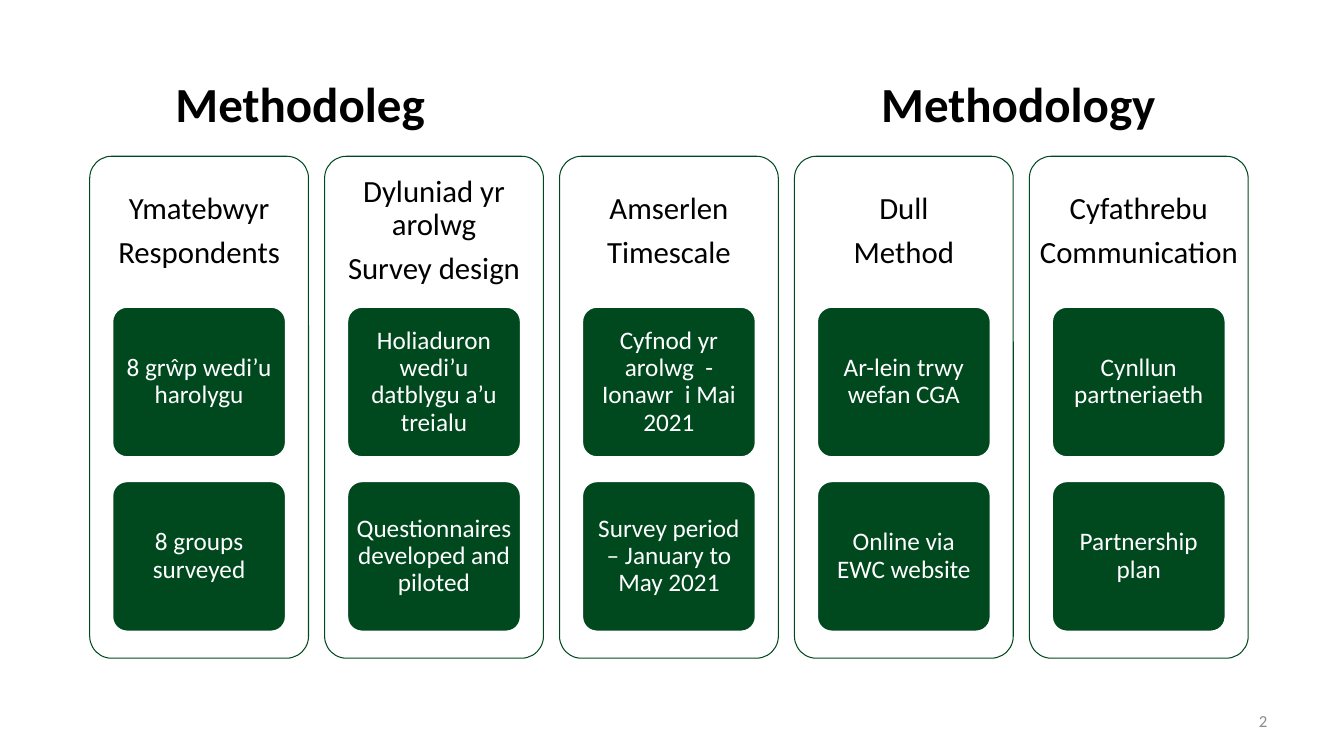
from lxml import etree
from pptx import Presentation
from pptx.dml.color import RGBColor
from pptx.enum.shapes import MSO_SHAPE as Shape
from pptx.enum.text import MSO_ANCHOR as Anchor, MSO_AUTO_SIZE as AutoSize, PP_ALIGN as Align
from pptx.oxml.ns import qn
from pptx.util import Inches, Pt

GREEN = RGBColor(0x00, 0x49, 0x1F)
WHITE = RGBColor(0xFF, 0xFF, 0xFF)
BLACK = RGBColor(0x00, 0x00, 0x00)
GREY = RGBColor(0x8C, 0x8C, 0x8C)

FIRST_LEFT, COLUMN_PITCH = 0.89, 2.33
PANEL_TOP, PANEL_WIDTH, PANEL_HEIGHT = 1.55, 2.17, 4.98
HEADING_HEIGHT = 1.49
TILE_INDENT, TILE_WIDTH, TILE_HEIGHT = 0.22, 1.73, 1.5
TILE_TOP, TILE_PITCH = 3.04, 1.73

# Welsh heading, English heading, Welsh tile, English tile
COLUMNS = [
    ("Ymatebwyr", "Respondents", "8 grŵp wedi’u harolygu", "8 groups surveyed"),
    ("Dyluniad yr arolwg", "Survey design",
     "Holiaduron wedi’u datblygu a’u treialu",
     "Questionnaires\vdeveloped and piloted"),
    ("Amserlen", "Timescale", "Cyfnod yr arolwg  - Ionawr  i Mai 2021",
     "Survey period – January to May 2021"),
    ("Dull", "Method", "Ar-lein trwy wefan CGA", "Online via EWC website"),
    ("Cyfathrebu", "Communication", "Cynllun partneriaeth", "Partnership plan"),
]


def write(frame, *lines, size, color, bold=False, align=Align.CENTER,
          anchor=Anchor.MIDDLE, insets=(0.1, 0.05), spacing=0.9, after=0, tab=None):
    """Fill a text frame with one paragraph per line; insets are (sides, ends)."""
    frame.word_wrap = True
    frame.auto_size = AutoSize.NONE
    frame.vertical_anchor = anchor
    frame.margin_left = frame.margin_right = Inches(insets[0])
    frame.margin_top = frame.margin_bottom = Inches(insets[1])
    for index, line in enumerate(lines):
        paragraph = frame.add_paragraph() if index else frame.paragraphs[0]
        paragraph.text = line
        paragraph.alignment = align
        paragraph.line_spacing = spacing
        paragraph.space_before = Pt(0)
        paragraph.space_after = Pt(after)
        if tab:
            stops = etree.SubElement(paragraph._p.get_or_add_pPr(), qn("a:tabLst"))
            etree.SubElement(stops, qn("a:tab"), pos=str(Inches(tab)), algn="l")
        for font in [paragraph.font] + [run.font for run in paragraph.runs]:
            font.name, font.size, font.bold = "Calibri", Pt(size), bold
            font.color.rgb = color


class MethodologySlide:
    def __init__(self, presentation):
        self.slide = presentation.slides.add_slide(presentation.slide_layouts[5])

    def title(self, text):
        heading = self.slide.shapes.title
        heading.left, heading.top = Inches(1.41), Inches(0.68)
        heading.width, heading.height = Inches(10.45), Inches(0.69)
        write(heading.text_frame, text, size=35, color=BLACK, bold=True,
              align=Align.LEFT, anchor=Anchor.TOP, insets=(0.33, 0.05),
              spacing=1.0, tab=7.0)

    def text(self, left, top, width, height, *lines, **style):
        box = self.slide.shapes.add_textbox(
            Inches(left), Inches(top), Inches(width), Inches(height))
        write(box.text_frame, *lines, **style)
        return box

    def rounded(self, left, top, width, height, line, line_width, fill=None):
        card = self.slide.shapes.add_shape(
            Shape.ROUNDED_RECTANGLE, Inches(left), Inches(top),
            Inches(width), Inches(height))
        card.adjustments[0] = 0.1
        card.shadow.inherit = False
        card.line.color.rgb, card.line.width = line, Pt(line_width)
        if fill is None:
            card.fill.background()
        else:
            card.fill.solid()
            card.fill.fore_color.rgb = fill
        return card

    def column(self, left, headings, tiles):
        self.rounded(left, PANEL_TOP, PANEL_WIDTH, PANEL_HEIGHT, GREEN, 0.75)
        self.text(left, PANEL_TOP, PANEL_WIDTH, HEADING_HEIGHT, *headings,
                  size=22, color=BLACK, insets=(0.09, 0.09), after=7.7)
        for row, wording in enumerate(tiles):
            tile = self.rounded(left + TILE_INDENT, TILE_TOP + row * TILE_PITCH,
                                TILE_WIDTH, TILE_HEIGHT, WHITE, 2, GREEN)
            write(tile.text_frame, wording, size=18, color=WHITE,
                  insets=(0.05, 0.04))

    def page_number(self, number):
        """Add the number as a live slide-number field."""
        box = self.text(9.56, 6.95, 3.11, 0.4, number, size=12, color=GREY,
                        align=Align.RIGHT, spacing=1.0)
        run = box.text_frame.paragraphs[0].runs[0]._r
        field = etree.Element(qn("a:fld"), type="slidenum",
                              id="{B6F15528-21DE-4FAA-801E-634DDDAF4B2B}")
        run.addprevious(field)
        field.extend(list(run))
        field.getparent().remove(run)


def main():
    presentation = Presentation()
    presentation.slide_width, presentation.slide_height = Inches(13.33), Inches(7.5)
    presentation.element.set("firstSlideNum", "2")
    page = MethodologySlide(presentation)
    page.title("Methodoleg\tMethodology")
    for index, wording in enumerate(COLUMNS):
        page.column(FIRST_LEFT + index * COLUMN_PITCH, wording[:2], wording[2:])
    page.page_number("2")
    presentation.save("out.pptx")


if __name__ == "__main__":
    main()
